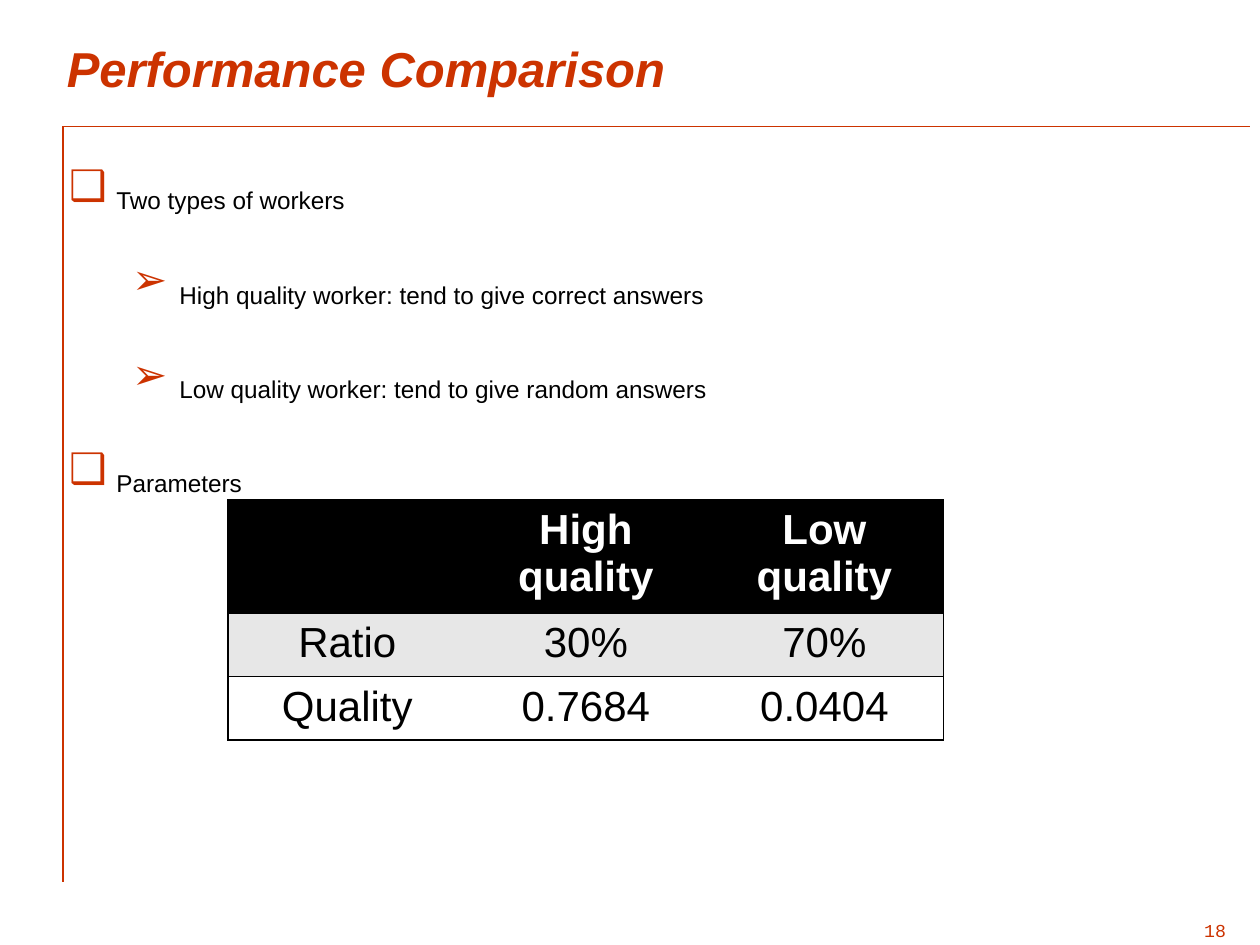
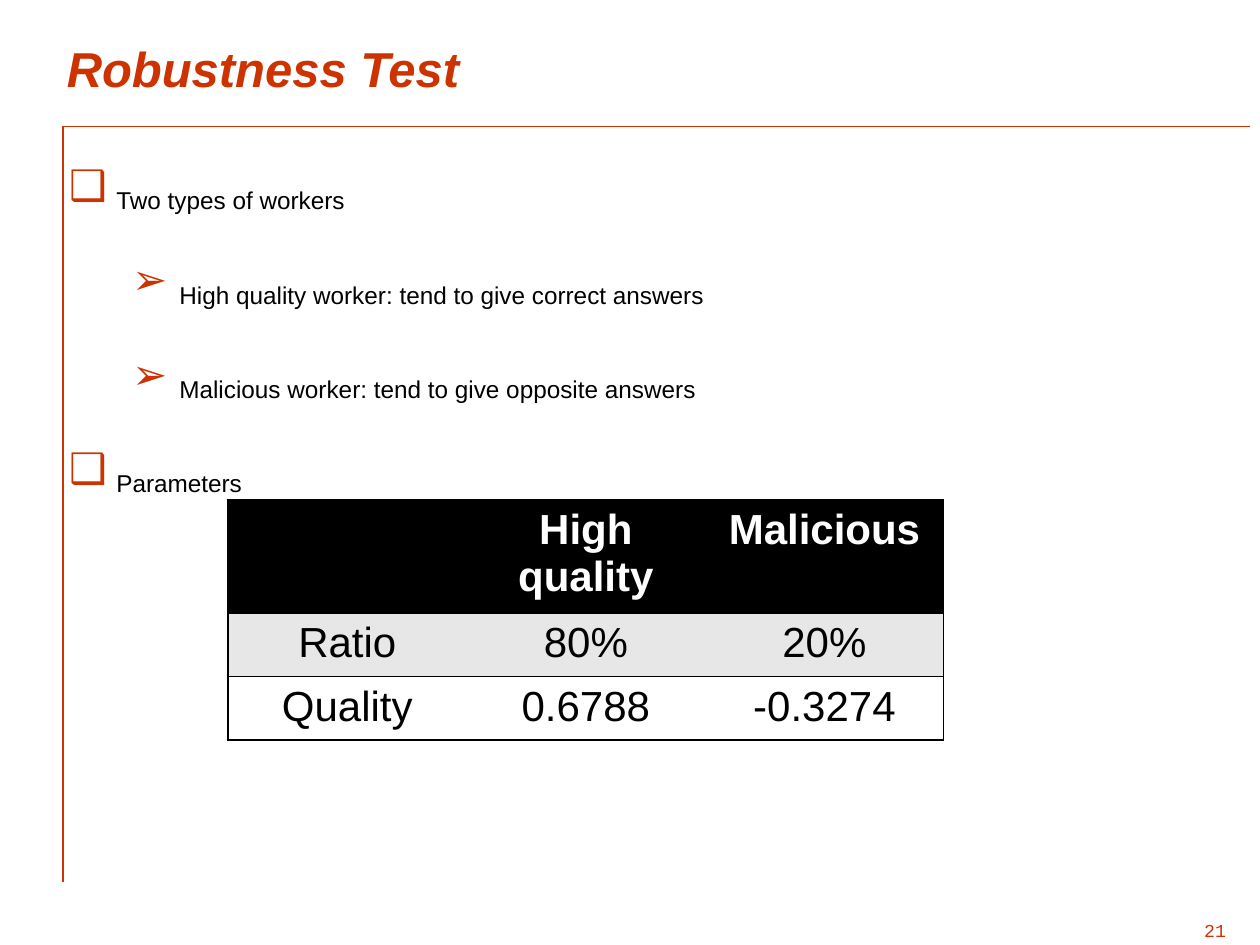
import pptx
import pptx.util
import pptx.dml.color
import pptx.enum.shapes
import pptx.enum.text
import pptx.oxml.ns
import lxml.etree

Align = pptx.enum.text.PP_ALIGN
Anchor = pptx.enum.text.MSO_ANCHOR
HUES = {"red": "CC3300", "ink": "000000", "paper": "FFFFFF", "band": "E7E7E7"}
MARKS = ("❑", "➢")


class Deck:
    """Slides in one style, laid out on a grid of 100 columns by 75 rows."""

    def __init__(self):
        self.file = pptx.Presentation()
        self.file.slide_width = pptx.util.Inches(10)
        self.file.slide_height = pptx.util.Inches(7.5)
        self.unit = self.file.slide_width / 100
        self.slide = None

    def grid(self, *spans):
        return [round(span * self.unit) for span in spans]

    def hue(self, name):
        return pptx.dml.color.RGBColor.from_string(HUES[name])

    def node(self, parent, tag, **attrs):
        return lxml.etree.SubElement(parent, pptx.oxml.ns.qn("a:" + tag), attrs)

    def style(self, par, size, hue, face="Arial", bold=False, slant=False, sub=False):
        font = par.font
        font.size = pptx.util.Pt(size)
        font.name = face
        font.bold = bold
        font.italic = slant
        font.color.rgb = self.hue(hue)
        if sub:
            font._rPr.set("baseline", "-25000")

    def start(self, title, number):
        self.slide = self.file.slides.add_slide(self.file.slide_layouts[5])
        self.line(5, 10, 99.2, 10, 0.25)
        self.line(5, 10, 5, 70, 0.75)
        self.title(title)
        self.number(number)

    def line(self, left, top, right, foot, width):
        ends = self.grid(left, top, right, foot)
        kind = pptx.enum.shapes.MSO_CONNECTOR.STRAIGHT
        rule = self.slide.shapes.add_connector(kind, *ends)
        rule.line.color.rgb = self.hue("red")
        rule.line.width = pptx.util.Pt(width)
        self.node(rule._element.spPr, "effectLst")

    def title(self, text):
        box = self.slide.shapes.title
        box.left, box.top, box.width, box.height = self.grid(4.3, 0.4, 90.1, 10)
        box.text_frame.text = text
        box.text_frame.vertical_anchor = Anchor.MIDDLE
        par = box.text_frame.paragraphs[0]
        par.alignment = Align.LEFT
        self.style(par, 28, "red", bold=True, slant=True)

    def frame(self, *area):
        frame = self.slide.shapes.add_textbox(*self.grid(*area)).text_frame
        frame.word_wrap = True
        return frame

    def number(self, value):
        frame = self.frame(90, 71.7, 8.3, 2.5)
        frame.vertical_anchor = Anchor.MIDDLE
        par = frame.paragraphs[0]
        par.text = str(value)
        par.alignment = Align.RIGHT
        self.style(par, 18, "red", "Courier New", sub=True)

    def bullets(self, items):
        frame = self.frame(4.5, 9.7, 93.4, 34.5)
        for row, (level, text) in enumerate(items):
            par = frame.add_paragraph() if row else frame.paragraphs[0]
            par.text = text
            par.level = level
            par.line_spacing = 1.5
            if row:
                par.space_before = pptx.util.Pt(4.8)
            self.mark(par, level)
            self.style(par, 24, "ink", sub=True)

    def mark(self, par, level):
        props = par._p.get_or_add_pPr()
        indent, hang = self.grid(3.75 + 5 * level, -3.75)
        props.set("marL", str(indent))
        props.set("indent", str(hang))
        self.node(self.node(props, "buClr"), "srgbClr", val=HUES["red"])
        self.node(props, "buFont", typeface="Arial")
        self.node(props, "buChar", char=MARKS[level])

    def table(self, rows):
        area = self.grid(18.1, 39.7, 56.8, 19)
        table = self.slide.shapes.add_table(len(rows), len(rows[0]), *area).table
        for line, high in zip(table.rows, (9, 5, 5)):
            line.height = self.grid(high)[0]
        fills = ("ink", "band", "paper")
        for row, texts in enumerate(rows):
            for col, text in enumerate(texts):
                cell = table.cell(row, col)
                self.border(cell, col == 0, col == len(texts) - 1)
                cell.fill.solid()
                cell.fill.fore_color.rgb = self.hue(fills[row])
                par = cell.text_frame.paragraphs[0]
                par.text = text
                par.alignment = Align.CENTER
                self.style(par, 24, "ink" if row else "paper", bold=row == 0)

    def border(self, cell, first, last):
        props = cell._tc.get_or_add_tcPr()
        for side, shown in zip("LRTB", (first, last, True, True)):
            edge = self.node(props, "ln" + side, w="12700")
            if shown:
                self.node(self.node(edge, "solidFill"), "srgbClr", val=HUES["ink"])
            else:
                self.node(edge, "noFill")

    def workers(self, title, number, other, rows):
        self.start(title, number)
        self.bullets([
            (0, "Two types of workers"),
            (1, "High quality worker: tend to give correct answers"),
            (1, other),
            (0, "Parameters"),
        ])
        self.table(rows)


def main():
    deck = Deck()
    deck.workers(
        "Performance Comparison", 18,
        "Low quality worker: tend to give random answers",
        [("", "High quality", "Low quality"),
         ("Ratio", "30%", "70%"),
         ("Quality", "0.7684", "0.0404")],
    )
    deck.workers(
        "Robustness Test", 21,
        "Malicious worker: tend to give opposite answers",
        [("", "High quality", "Malicious"),
         ("Ratio", "80%", "20%"),
         ("Quality", "0.6788", "-0.3274")],
    )
    deck.file.save("out.pptx")


if __name__ == "__main__":
    main()
